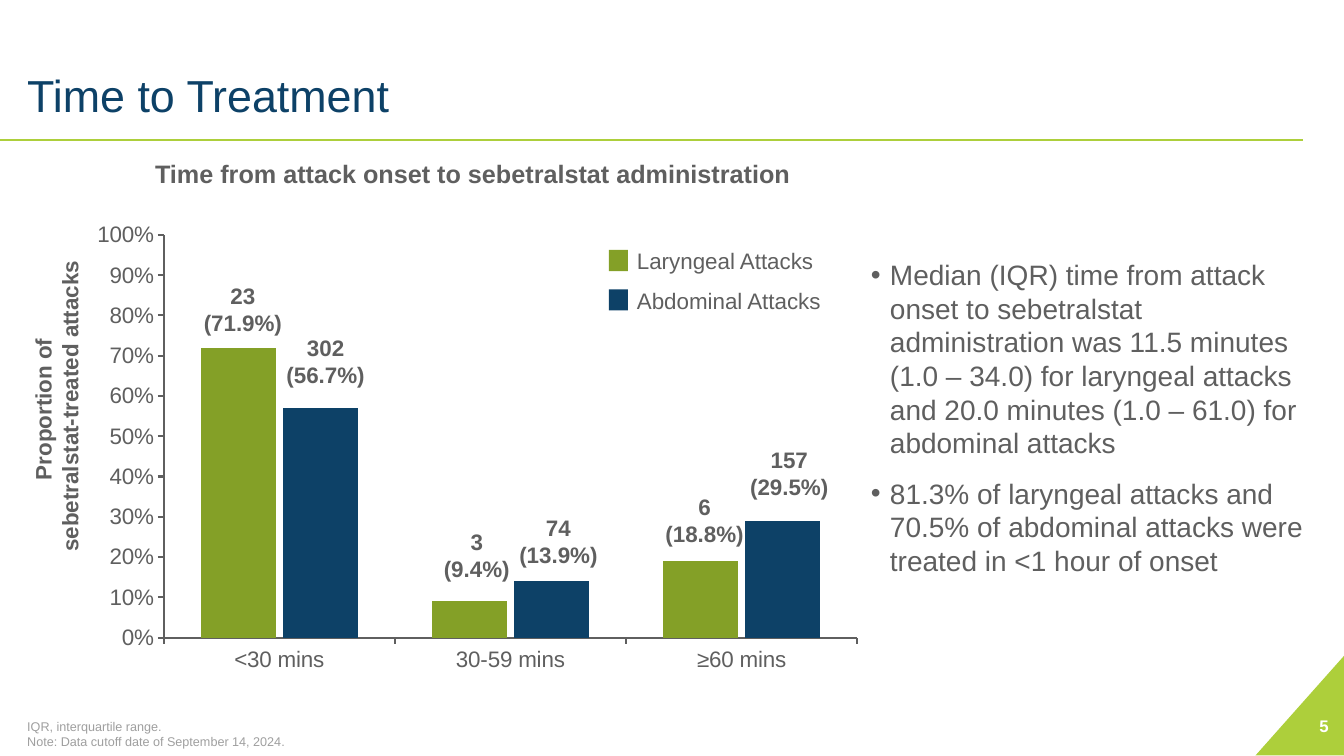
from lxml import etree
from pptx import Presentation
from pptx.chart.data import CategoryChartData
from pptx.dml.color import RGBColor
from pptx.enum.chart import XL_CHART_TYPE, XL_TICK_MARK
from pptx.enum.shapes import MSO_CONNECTOR, MSO_SHAPE
from pptx.enum.text import MSO_ANCHOR, PP_ALIGN
from pptx.oxml import parse_xml
from pptx.oxml.ns import nsdecls, qn
from pptx.util import Inches, Pt

LEFT, CENTER, RIGHT = PP_ALIGN.LEFT, PP_ALIGN.CENTER, PP_ALIGN.RIGHT
TOP, MIDDLE, BOTTOM = MSO_ANCHOR.TOP, MSO_ANCHOR.MIDDLE, MSO_ANCHOR.BOTTOM
COLORS = {"lime": "ADCF3B", "green": "84A027", "navy": "0D4167",
          "text": "5F5F5F", "note": "9F9F9F", "white": "FFFFFF"}


def set_text(shape, paragraphs, size, color="text", bold=False, align=LEFT,
             anchor=TOP, margins=(0.1, 0.05, 0.1, 0.05), bullet=False):
    frame = shape.text_frame
    frame.word_wrap = True
    frame.vertical_anchor = anchor
    for side, margin in zip(("left", "top", "right", "bottom"), margins):
        setattr(frame, f"margin_{side}", Inches(margin))
    for index, text in enumerate(paragraphs):
        paragraph = frame.add_paragraph() if index else frame.paragraphs[0]
        paragraph.text = text
        paragraph.alignment = align
        if bullet:
            properties = paragraph._p.get_or_add_pPr()
            properties.set("marL", str(Inches(0.19)))
            properties.set("indent", str(-Inches(0.19)))
            etree.SubElement(properties, qn("a:buFont")).set("typeface", "Arial")
            etree.SubElement(properties, qn("a:buChar")).set("char", "•")
            paragraph.space_before = Pt(6 if index else 0)
            paragraph.space_after = Pt(6)
        for run in paragraph.runs:
            formats = {"name": "Arial", "size": Pt(size), "bold": bold}
            for name, value in formats.items():
                setattr(run.font, name, value)
            run.font.color.rgb = RGBColor.from_string(COLORS[color])


def add_block(preset, box, color):
    shape = slide.shapes.add_shape(preset, *map(Inches, box))
    shape.shadow.inherit = False
    shape.fill.solid()
    shape.fill.fore_color.rgb = RGBColor.from_string(COLORS[color])
    shape.line.fill.background()
    return shape


presentation = Presentation()
presentation.slide_width = Inches(40 / 3)
presentation.slide_height = Inches(7.5)
slide = presentation.slides.add_slide(presentation.slide_layouts[6])

# Corner triangle and title rule
corner = add_block(MSO_SHAPE.RIGHT_TRIANGLE, (12.4, 6.56, 0.99, 0.88), "lime")
corner.rotation = 270
rule = slide.shapes.add_connector(MSO_CONNECTOR.STRAIGHT, Inches(0), Inches(1.39),
                                  Inches(12.93), Inches(1.39))
rule.line.color.rgb = RGBColor.from_string(COLORS["lime"])
rule.line.width = Pt(2)
etree.SubElement(rule._element.spPr, qn("a:effectLst"))

# Findings
findings = add_block(MSO_SHAPE.RECTANGLE, (8.54, 2.09, 4.55, 4.1), "white")
set_text(findings, [
    "Median (IQR) time from attack onset to sebetralstat administration was "
    "11.5 minutes (1.0 – 34.0) for laryngeal attacks and 20.0 minutes "
    "(1.0 – 61.0) for abdominal attacks",
    "81.3% of laryngeal attacks and 70.5% of abdominal attacks were treated "
    "in <1 hour of onset",
], 20, anchor=MIDDLE, bullet=True)

# Column chart
series_colors = {"Laryngeal Attacks": "green", "Abdominal Attacks": "navy"}
chart_data = CategoryChartData(number_format="0%")
chart_data.categories = ["<30 mins", "30-59 mins", "≥60 mins"]
chart_data.add_series("Laryngeal Attacks", (0.72, 0.09, 0.19))
chart_data.add_series("Abdominal Attacks", (0.57, 0.14, 0.29))
chart = slide.shapes.add_chart(
    XL_CHART_TYPE.COLUMN_CLUSTERED, Inches(0.89), Inches(2.21), Inches(7.81),
    Inches(4.48), chart_data).chart
chart.has_legend = False
chart.has_title = False
chart.font.name = "Arial"
chart.font.size = Pt(16)
chart.font.color.rgb = RGBColor.from_string(COLORS["text"])
plot = chart.plots[0]
plot.gap_width = 100
plot.overlap = -10
plot.vary_by_categories = False
for series in plot.series:
    series.format.fill.solid()
    series.format.fill.fore_color.rgb = RGBColor.from_string(
        COLORS[series_colors[series.name]])
for axis in (chart.category_axis, chart.value_axis):
    axis.has_major_gridlines = False
    axis.major_tick_mark = XL_TICK_MARK.OUTSIDE
    axis.minor_tick_mark = XL_TICK_MARK.NONE
    axis.format.line.color.rgb = RGBColor.from_string(COLORS["text"])
    axis.format.line.width = Pt(1.5)
value_axis = chart.value_axis
value_axis.minimum_scale = 0
value_axis.maximum_scale = 1
value_axis.major_unit = 0.1
value_axis.tick_labels.number_format = "0%"
value_axis.tick_labels.number_format_is_linked = False

# Fixed inner plot area
plot_area = chart._chartSpace.chart.plotArea
for layout in plot_area.findall(qn("c:layout")):
    plot_area.remove(layout)
plot_area.insert(0, parse_xml(
    f'<c:layout {nsdecls("c")}><c:manualLayout><c:layoutTarget val="inner"/>'
    '<c:xMode val="edge"/><c:yMode val="edge"/><c:x val="0.094"/>'
    '<c:y val="0.027"/><c:w val="0.881"/><c:h val="0.892"/>'
    '</c:manualLayout></c:layout>'))

# Legend
for row, (label, color) in enumerate(series_colors.items()):
    add_block(MSO_SHAPE.RECTANGLE, (6.04, 2.48 + 0.39 * row, 0.19, 0.21), color)
    legend_label = slide.shapes.add_textbox(
        Inches(6.22), Inches(2.4 + 0.4 * row), Inches(2.21), Inches(0.41))
    set_text(legend_label, [label], 16)

# Column labels: count, share, centre, top
column_labels = [
    ("23", "71.9%", 2.41, 2.75), ("302", "56.7%", 3.23, 3.27),
    ("3", "9.4%", 4.73, 5.19), ("74", "13.9%", 5.54, 5.05),
    ("6", "18.8%", 6.99, 4.84), ("157", "29.5%", 7.83, 4.38),
]
for count, share, center, top in column_labels:
    column_label = slide.shapes.add_textbox(
        Inches(center - 0.95), Inches(top), Inches(1.9), Inches(0.64))
    set_text(column_label, [f"{count}\n({share})"], 16, bold=True, align=CENTER)

# Title, headings, footnote and slide number
text_boxes = [
    ("Time to Treatment", (0.27, 0.26, 11.78, 0.99), 0,
     {"size": 32, "color": "navy", "anchor": BOTTOM, "margins": (0, 0.05, 0, 0.05)}),
    ("Time from attack onset to sebetralstat administration",
     (1.41, 1.52, 6.56, 0.4), 0, {"size": 18, "bold": True, "align": CENTER}),
    ("Proportion of \nsebetralstat-treated attacks", (-1.49, 3.71, 4.1, 0.64), 270,
     {"size": 16, "bold": True, "align": CENTER}),
    ("IQR, interquartile range.\nNote: Data cutoff date of September 14, 2024.",
     (0.27, 6.95, 12.18, 0.48), 0,
     {"size": 9, "color": "note", "anchor": BOTTOM, "margins": (0, 0, 0, 0)}),
    ("5", (12.62, 7, 0.66, 0.4), 0,
     {"size": 12, "color": "white", "bold": True, "align": RIGHT, "anchor": MIDDLE}),
]
for text, box, rotation, formats in text_boxes:
    text_box = slide.shapes.add_textbox(*map(Inches, box))
    text_box.rotation = rotation
    set_text(text_box, [text], **formats)

presentation.save("out.pptx")
